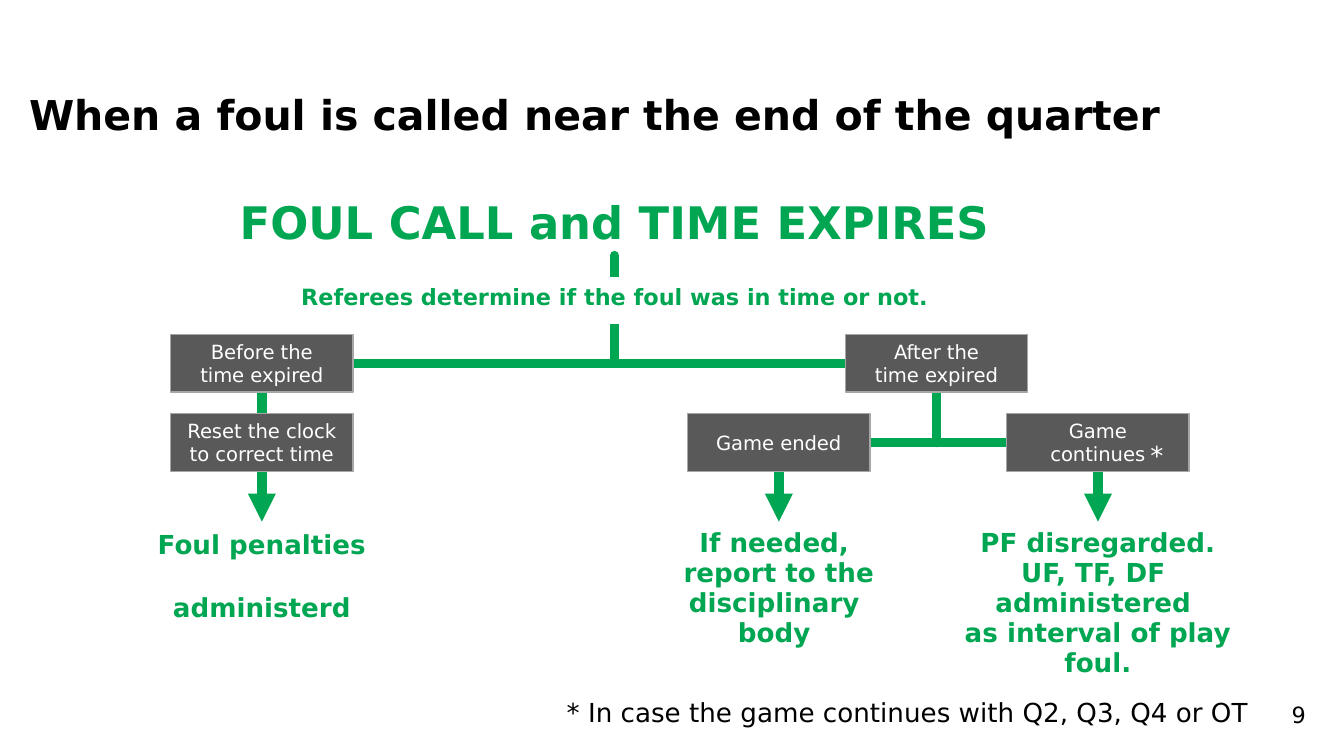
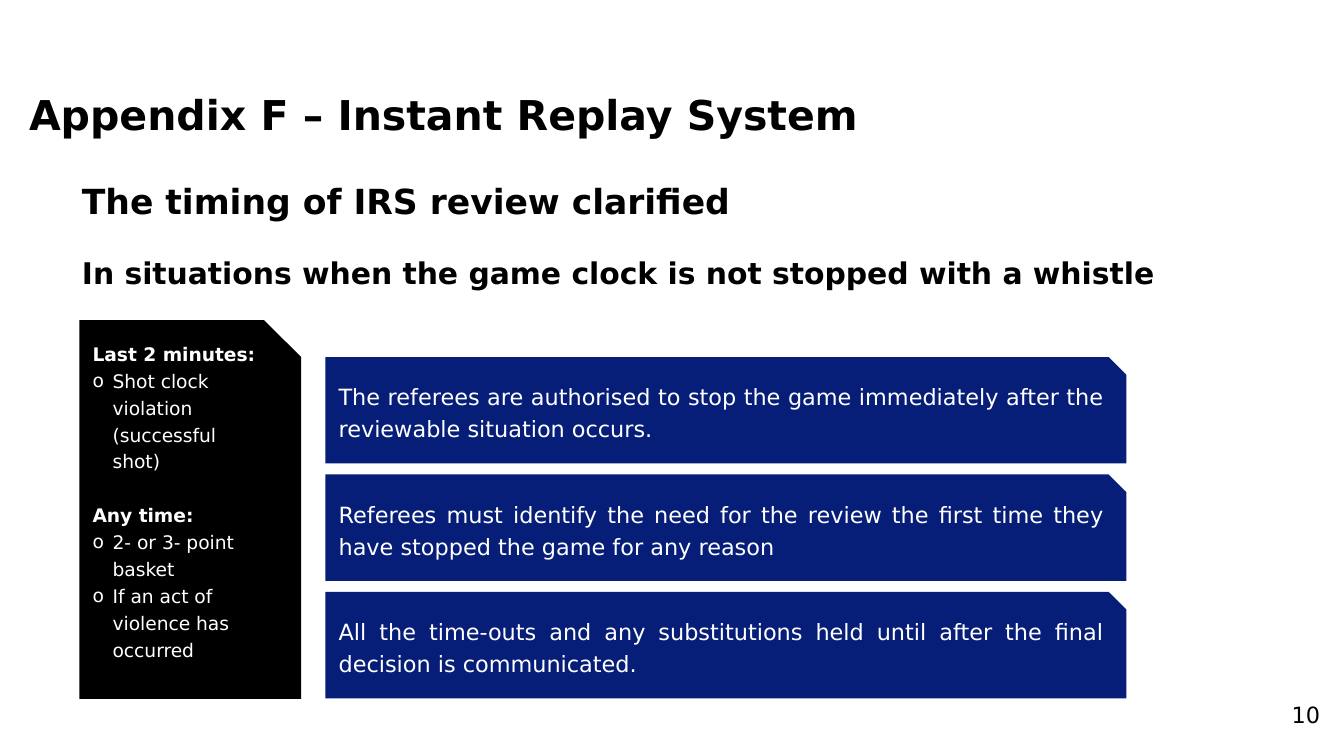
"""Build two slides on fouls near the end of a quarter and replay review."""

from dataclasses import dataclass

from lxml.etree import SubElement
from pptx import Presentation
from pptx.dml.color import RGBColor
from pptx.enum.shapes import MSO_CONNECTOR, MSO_SHAPE
from pptx.enum.text import MSO_ANCHOR, PP_ALIGN
from pptx.oxml.ns import qn
from pptx.util import Cm, Pt


@dataclass(frozen=True)
class Theme:
    """Hold the colours, font and type sizes of the deck."""

    font: str = "DejaVu Sans"
    black: str = "000000"
    white: str = "FFFFFF"
    green: str = "00A651"
    grey: str = "595959"
    edge: str = "A6A6A6"
    navy: str = "061E77"
    title: float = 22
    lead: float = 18.5
    head: float = 16
    flow: float = 24
    goal: float = 14
    body: float = 12
    node: float = 10.5
    side: float = 10
    line: float = 5


THEME = Theme()
NODE_W, NODE_H = 3.45, 1.09


def place(box):
    """Turn left, top, width and height in centimetres into lengths."""
    return [Cm(size) for size in box]


def write(para, text, size, color, bold=False, align=PP_ALIGN.LEFT, space=None):
    """Fill a paragraph run by run, with a break at each new line."""
    para.alignment = align
    if space:
        para.line_spacing = space
    for row, part in enumerate(text.split("\n")):
        if row:
            para.add_line_break()
        run = para.add_run()
        run.text = part
        run.font.name = THEME.font
        run.font.size = Pt(size)
        run.font.bold = bold
        run.font.color.rgb = RGBColor.from_string(color)


def add_paras(frame, texts, *style, gap=0, **more):
    """Write texts as paragraphs of one style, set apart by a gap."""
    for row, text in enumerate(texts):
        para = frame.add_paragraph() if row else frame.paragraphs[0]
        if row and gap:
            para.space_before = Pt(gap)
        write(para, text, *style, **more)


def add_label(shapes, box, texts, size, color, wrap=True,
              anchor=MSO_ANCHOR.TOP, **style):
    """Add a plain text box."""
    frame = shapes.add_textbox(*place(box)).text_frame
    frame.word_wrap = wrap
    frame.vertical_anchor = anchor
    add_paras(frame, texts, size, color, **style)


def add_block(shapes, kind, box, fill, cuts, edge=None):
    """Add a filled shape and return its text frame."""
    shape = shapes.add_shape(kind, *place(box))
    shape.shadow.inherit = False
    for spot, cut in enumerate(cuts):
        shape.adjustments[spot] = cut
    shape.fill.solid()
    shape.fill.fore_color.rgb = RGBColor.from_string(fill)
    if edge:
        shape.line.color.rgb = RGBColor.from_string(edge)
        shape.line.width = Pt(0.75)
    else:
        shape.line.fill.background()
    frame = shape.text_frame
    frame.word_wrap = True
    frame.vertical_anchor = MSO_ANCHOR.MIDDLE
    return frame


def trim(frame, *sides):
    """Remove the inner margins on the named sides."""
    for side in sides:
        setattr(frame, f"margin_{side}", 0)


def add_node(shapes, mid, top, text, tight=False):
    """Add a grey step of the flow, centred on mid."""
    box = (mid - NODE_W / 2, top, NODE_W, NODE_H)
    frame = add_block(shapes, MSO_SHAPE.PARALLELOGRAM, box, THEME.grey, [0],
                      THEME.edge)
    if tight:
        trim(frame, "left", "right")
    add_paras(frame, [text], THEME.node, THEME.white,
              align=PP_ALIGN.CENTER, space=Pt(12.4))


def add_goal(shapes, mid, top, width, texts, **style):
    """Add a green result below an arrow, centred on mid."""
    add_label(shapes, (mid - width / 2, top, width, 2.54), texts, THEME.goal,
              THEME.green, wrap=False, bold=True, align=PP_ALIGN.CENTER, **style)


def add_line(shapes, start, end, arrow=False):
    """Add a thick green line, with an arrowhead if asked."""
    ends = [Cm(size) for size in (*start, *end)]
    link = shapes.add_connector(MSO_CONNECTOR.STRAIGHT, *ends)
    link.line.color.rgb = RGBColor.from_string(THEME.green)
    link.line.width = Pt(THEME.line)
    stroke = link.line._get_or_add_ln()
    stroke.set("cap", "rnd")
    if arrow:
        SubElement(stroke, qn("a:tailEnd"), type="triangle")
    SubElement(link._element.spPr, qn("a:effectLst"))


def add_point(para):
    """Give a paragraph a hanging bullet."""
    props = para._p.get_or_add_pPr()
    props.set("marL", str(Cm(0.38)))
    props.set("indent", str(-Cm(0.38)))
    SubElement(props, qn("a:buFont"), typeface=THEME.font)
    SubElement(props, qn("a:buChar"), char="o")


def add_slide(deck, title, number, width):
    """Add a blank slide with its title and number."""
    shapes = deck.slides.add_slide(deck.slide_layouts[6]).shapes
    add_label(shapes, (24.16, 13.13, 1.24, 0.76), [number], THEME.body,
              THEME.black)
    add_label(shapes, (0.3, 1.55, width, 1.2), [title], THEME.title,
              THEME.black, anchor=MSO_ANCHOR.MIDDLE, bold=True)
    return shapes


def draw_flow(deck):
    """Draw the slide on fouls called as time expires."""
    shapes = add_slide(deck, "When a foul is called near the end of the quarter",
                       "9", 23)
    flow = shapes.add_group_shape().shapes
    left, stem, ended, after, more = 4.95, 11.61, 14.72, 17.7, 20.75
    high, low, goal = 6.32, 7.82, 9.86
    fork, split = high + NODE_H / 2, low + NODE_H / 2

    add_line(flow, (left, fork), (left, goal), arrow=True)
    for mid in (ended, more):
        add_line(flow, (mid, split), (mid, goal), arrow=True)
    add_line(flow, (after, fork), (after, split))
    add_line(flow, (stem, 4.83), (stem, fork))
    add_line(flow, (after, fork), (left, fork))
    add_line(flow, (more, split), (ended, split))

    add_label(flow, (stem - 7.5, 3.56, 15, 1.27), ["FOUL CALL and TIME EXPIRES"],
              THEME.flow, THEME.green, wrap=False, bold=True,
              align=PP_ALIGN.CENTER)
    band = add_block(flow, MSO_SHAPE.PARALLELOGRAM, (4.29, 5.23, 14.66, 0.89),
                     THEME.white, [0])
    band.vertical_anchor = MSO_ANCHOR.TOP
    trim(band, "left", "top", "right", "bottom")
    add_paras(band, ["Referees determine if the foul was in time or not."],
              THEME.body, THEME.green, bold=True, align=PP_ALIGN.CENTER,
              space=Pt(16))

    add_node(flow, left, high, "Before the time expired")
    add_node(flow, left, low, "Reset the clock to correct time", tight=True)
    add_node(flow, after, high, "After the time expired")
    add_node(flow, ended, low, "Game ended")
    add_node(flow, more, low, "Game continues")
    add_label(flow, (21.49, 8.18, 0.84, 0.86), ["*"], THEME.goal, THEME.white,
              wrap=False)

    add_goal(flow, left, goal, 4.6, ["Foul penalties", "administerd"], gap=17)
    add_goal(flow, ended, goal, 4.24,
             ["If needed, \nreport to the ", "disciplinary ", "body "],
             space=Pt(16))
    add_goal(flow, more, goal, 6.96,
             ["PF disregarded.",
              "UF, TF, DF \nadministered \nas interval of play\nfoul."],
             space=Pt(16))
    add_label(flow, (10.46, 13.03, 14.45, 0.86),
              ["* In case the game continues with Q2, Q3, Q4 or OT"],
              THEME.goal, THEME.black)


def draw_side(shapes):
    """Draw the black panel of cases for review."""
    frame = add_block(shapes, MSO_SHAPE.SNIP_ROUND_RECTANGLE,
                      (1.5, 6.05, 4.19, 7.16), THEME.black, [0, 0.167])
    frame.margin_bottom = Cm(0.5)
    cases = {
        "Last 2 minutes:": ["Shot clock violation (successful shot)"],
        "Any time:": ["2- or 3- point basket",
                      "If an act of violence has occurred"],
    }
    para = frame.paragraphs[0]
    for row, (head, points) in enumerate(cases.items()):
        if row:
            para = frame.add_paragraph()
            para.space_before = Pt(14.4)
        write(para, head, THEME.side, THEME.white, bold=True, space=1.2)
        for point in points:
            para = frame.add_paragraph()
            write(para, point, THEME.side, THEME.white, space=1.2)
            add_point(para)


def draw_replay(deck):
    """Draw the slide on the timing of replay review."""
    shapes = add_slide(deck, "Appendix F – Instant Replay System", "10", 19.6)
    add_label(shapes, (1.3, 3.35, 22.2, 1),
              ["The timing of IRS review clarified"], THEME.lead, THEME.black,
              anchor=MSO_ANCHOR.MIDDLE, bold=True, space=0.9)
    add_label(shapes, (1.3, 4.55, 22.2, 9.22),
              ["In situations when the game clock is not stopped with a whistle"],
              THEME.head, THEME.black, bold=True, align=PP_ALIGN.JUSTIFY,
              space=1.2)
    draw_side(shapes)
    rules = [
        "The referees are authorised to stop the game immediately after the "
        "reviewable situation occurs.",
        "Referees must identify the need for the review the first time they "
        "have stopped the game for any reason",
        "All the time-outs and any substitutions held until after the final "
        "decision is communicated.",
    ]
    for row, rule in enumerate(rules):
        card = add_block(shapes, MSO_SHAPE.SNIP_ROUND_RECTANGLE,
                         (6.15, 6.75 + row * 2.22, 15.14, 2.01), THEME.navy,
                         [0, 0.167])
        add_paras(card, [rule], THEME.body, THEME.white,
                  align=PP_ALIGN.JUSTIFY, space=1.2)


def main():
    """Build and save the deck."""
    deck = Presentation()
    deck.slide_width, deck.slide_height = Cm(25.4), Cm(14.29)
    draw_flow(deck)
    draw_replay(deck)
    deck.save("out.pptx")


if __name__ == "__main__":
    main()
